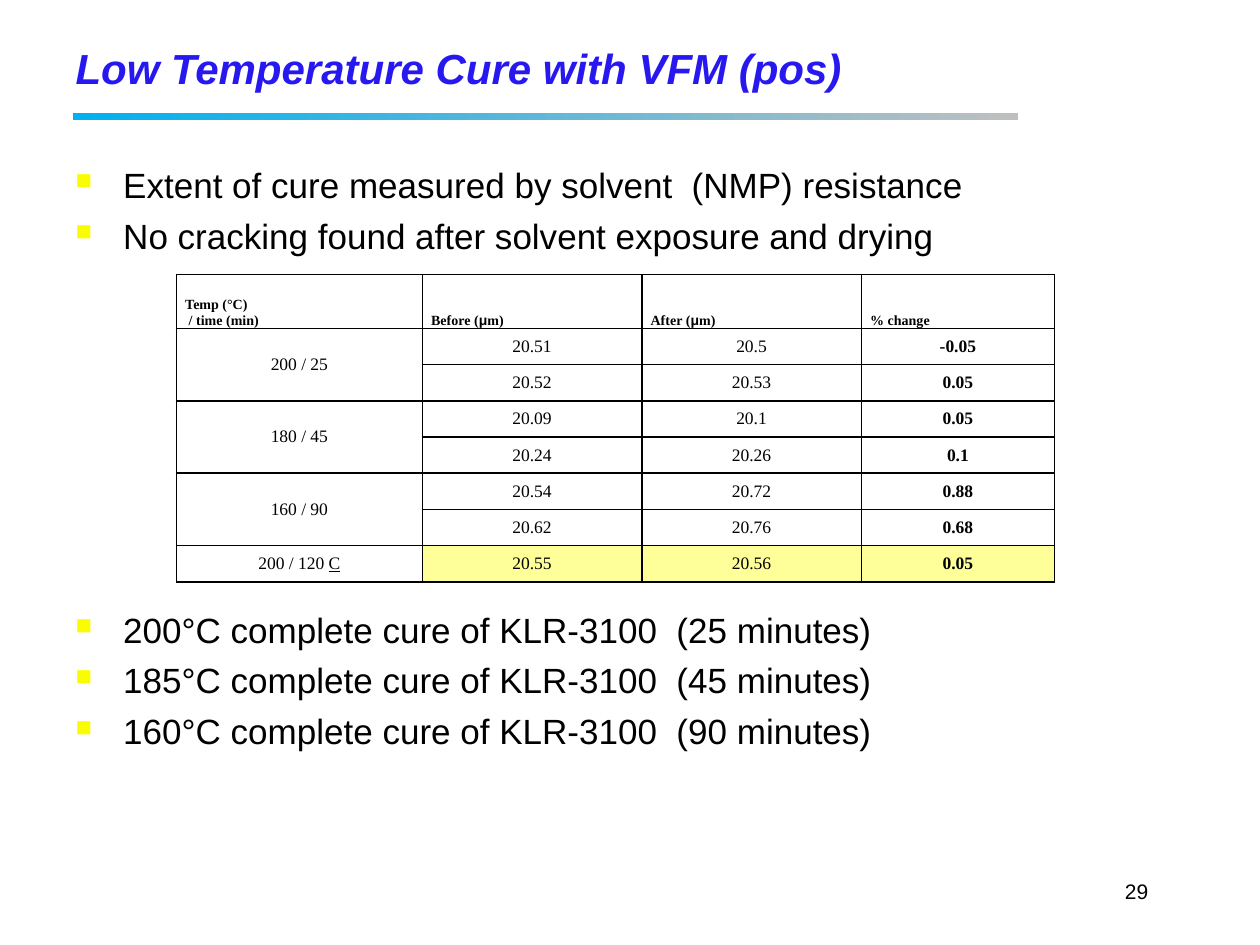
from dataclasses import dataclass

from lxml.etree import SubElement as Sub
from pptx import Presentation
from pptx.dml.color import RGBColor as RGB
from pptx.enum.shapes import MSO_SHAPE as Kind
from pptx.enum.text import MSO_ANCHOR as Anchor, MSO_AUTO_SIZE as Fit, PP_ALIGN as Align
from pptx.oxml.ns import qn
from pptx.util import Inches, Pt


@dataclass(frozen=True)
class Theme:
    """Colours, fonts and type sizes of the slide."""
    title: str = "2718F0"
    ink: str = "000000"
    start: str = "00B0F0"
    end: str = "BFBFBF"
    mark: str = "FAFD00"
    glow: str = "FFFF99"
    sans: str = "Arial"
    serif: str = "Times New Roman"
    head: int = 24
    body: int = 20
    cell: int = 10
    label: int = 8
    foot: int = 12
    lead: int = 28
    space: int = 5


T = Theme()
WIDE, HIGH = Inches(10), Inches(7.5)
COLS, ROWS = 100, 75

MU = ("μ", {"face": T.sans})
HEADS = [
    ["Temp (°C)", " / time (min)"],
    [["Before (", MU, "m)"]],
    [["After (", MU, "m)"]],
    ["% change"],
]
CURES = [
    (["200 / 25"], [("20.51", "20.5", "-0.05"), ("20.52", "20.53", "0.05")]),
    (["180 / 45"], [("20.09", "20.1", "0.05"), ("20.24", "20.26", "0.1")]),
    (["160 / 90"], [("20.54", "20.72", "0.88"), ("20.62", "20.76", "0.68")]),
    ([["200 / 120 ", ("C", {"line": True})]], [("20.55", "20.56", "0.05")]),
]
NOTES = [
    "Extent of cure measured by solvent  (NMP) resistance",
    "No cracking found after solvent exposure and drying",
]
ENDS = [
    f"{heat}°C complete cure of KLR-3100  ({time} minutes)"
    for heat, time in ((200, 25), (185, 45), (160, 90))
]


def area(x, y, w, h):
    """Turn grid columns and rows into a box of lengths."""
    return (int(WIDE * x / COLS), int(HIGH * y / ROWS),
            int(WIDE * w / COLS), int(HIGH * h / ROWS))


def style(run, size=T.body, face=T.sans, color=T.ink, bold=False, slant=False, line=False):
    """Format one run."""
    font = run.font
    font.size, font.name = Pt(size), face
    font.bold, font.italic, font.underline = bold, slant, line
    font.color.rgb = RGB.from_string(color)


def write(frame, paras, align=Align.LEFT, **look):
    """Fill a frame with paragraphs, each a string or a list of runs."""
    frame.word_wrap = True
    for i, parts in enumerate(paras):
        para = frame.add_paragraph() if i else frame.paragraphs[0]
        para.alignment = align
        for part in [parts] if isinstance(parts, str) else parts:
            text, extra = (part, {}) if isinstance(part, str) else part
            run = para.add_run()
            run.text = text
            style(run, **{**look, **extra})


def bullet(para):
    """Give a paragraph a hanging square mark."""
    props = para._p.get_or_add_pPr()
    props.set("marL", str(Inches(0.38)))
    props.set("indent", str(-Inches(0.38)))
    Sub(Sub(props, qn("a:buClr")), qn("a:srgbClr"), val=T.mark)
    Sub(props, qn("a:buSzPct"), val="65000")
    Sub(props, qn("a:buChar"), char="■")


def border(cell):
    """Draw a thin line on all sides of a cell."""
    props = cell._tc.get_or_add_tcPr()
    for side in ("lnL", "lnR", "lnT", "lnB"):
        edge = Sub(props, qn(f"a:{side}"), w=str(Pt(1)))
        Sub(Sub(edge, qn("a:solidFill")), qn("a:srgbClr"), val=T.ink)


def heading(slide, box):
    """Place the slide title."""
    shape = slide.shapes.title
    shape.left, shape.top, shape.width, shape.height = box
    frame = shape.text_frame
    frame.auto_size, frame.vertical_anchor = Fit.NONE, Anchor.MIDDLE
    write(frame, ["Low Temperature Cure with VFM (pos)"],
          size=T.head, color=T.title, bold=True, slant=True)


def rule(slide, box):
    """Draw the fading bar below the title."""
    bar = slide.shapes.add_shape(Kind.RECTANGLE, *box)
    bar.shadow.inherit = False
    bar.line.fill.background()
    bar.fill.gradient()
    bar.fill.gradient_angle = 0
    for stop, color in zip(bar.fill.gradient_stops, (T.start, T.end)):
        stop.color.rgb = RGB.from_string(color)


def points(slide, box):
    """List the findings, leaving room for the table between them."""
    frame = slide.shapes.add_textbox(*box).text_frame
    write(frame, NOTES + ENDS)
    for i, para in enumerate(frame.paragraphs):
        skip = 7 * T.lead if i == len(NOTES) else 0
        para.space_before = Pt(T.space + skip if i else 0)
        bullet(para)


def fill(cell, paras, anchor=Anchor.MIDDLE, glow=False, **look):
    """Write and format one table cell."""
    cell.margin_left = cell.margin_right = Inches(0.07)
    cell.margin_top = cell.margin_bottom = 0
    cell.vertical_anchor = anchor
    write(cell.text_frame, paras, face=T.serif, **look)
    if glow:
        cell.fill.solid()
        cell.fill.fore_color.rgb = RGB.from_string(T.glow)
    else:
        cell.fill.background()


def results(slide, box):
    """Build the table of film thickness before and after."""
    wide, high = (28, 25, 25, 22), (43,) + (29,) * 7
    grid = slide.shapes.add_table(len(high), len(wide), *box).table
    grid.first_row = grid.horz_banding = False
    for col, part in zip(grid.columns, wide):
        col.width = int(box[2] * part / sum(wide))
    for row, part in zip(grid.rows, high):
        row.height = int(box[3] * part / sum(high))
    for cell in grid.iter_cells():
        border(cell)
        cell.fill.background()
    for c, paras in enumerate(HEADS):
        fill(grid.cell(0, c), paras, Anchor.BOTTOM, size=T.label, bold=True)
    r = 1
    for name, runs in CURES:
        first = grid.cell(r, 0)
        if len(runs) > 1:
            first.merge(grid.cell(r + len(runs) - 1, 0))
        fill(first, name, align=Align.CENTER, size=T.cell)
        for values in runs:
            for c, value in enumerate(values, 1):
                fill(grid.cell(r, c), [value], glow=len(runs) == 1,
                     align=Align.CENTER, size=T.cell, bold=c == 3)
            r += 1


def footer(slide, box):
    """Place the page number."""
    write(slide.shapes.add_textbox(*box).text_frame, ["29"], size=T.foot)


def main():
    """Build and save the slide."""
    deck = Presentation()
    deck.slide_width, deck.slide_height = WIDE, HIGH
    slide = deck.slides.add_slide(deck.slide_layouts.get_by_name("Title Only"))
    rule(slide, area(5.8, 9, 75, 0.5))
    heading(slide, area(5, 2.5, 90, 5.8))
    results(slide, area(14, 21.8, 69.7, 24.4))
    footer(slide, area(88.3, 69.2, 6.7, 4.1))
    points(slide, area(5, 12.5, 90, 56.7))
    deck.save("out.pptx")


if __name__ == "__main__":
    main()
